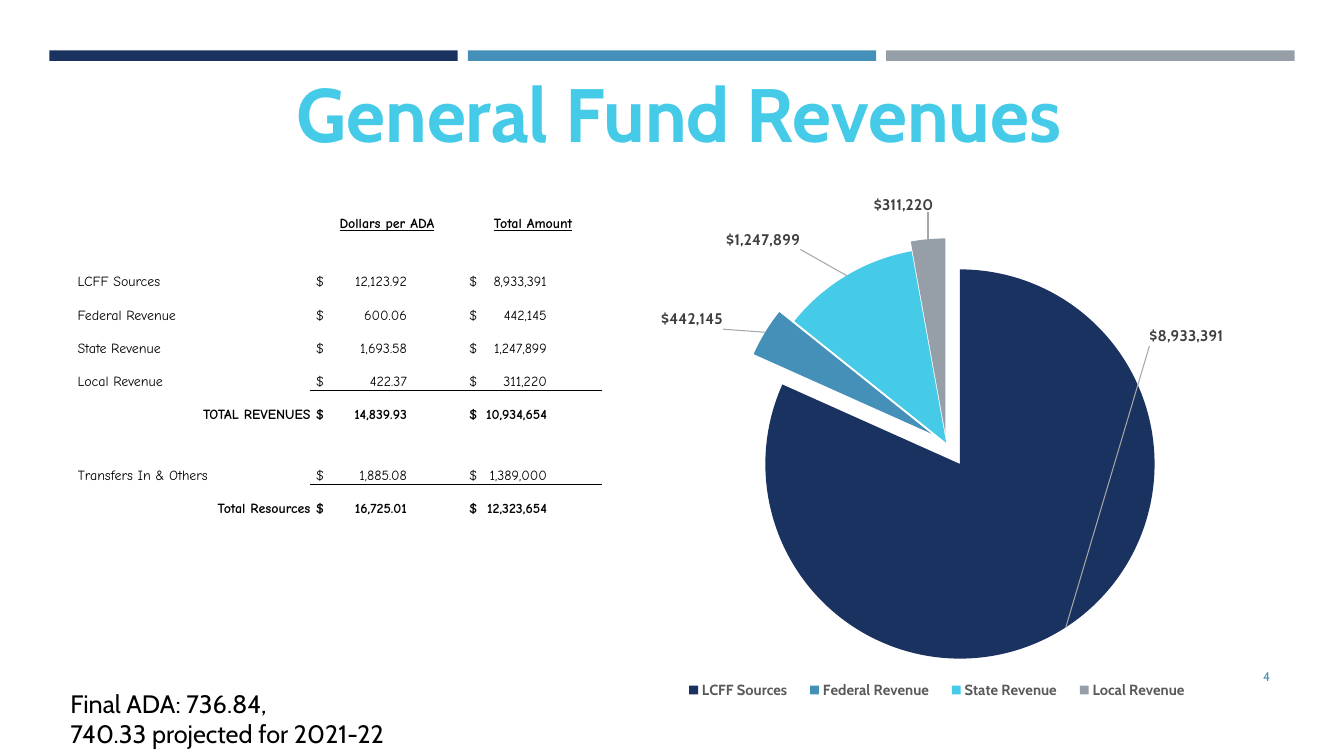
import pptx
import pptx.chart.data
import pptx.dml.color
import pptx.enum.chart
import pptx.enum.shapes
import pptx.enum.text
import pptx.oxml
import pptx.oxml.ns
import pptx.util

Pt = pptx.util.Pt
Align = pptx.enum.text.PP_ALIGN
Anchor = pptx.enum.text.MSO_ANCHOR

COLORS = {
    "navy": "1A3260", "blue": "4590B8", "cyan": "45CBE8", "gray": "969FA7",
    "black": "000000", "label": "404040", "legend": "595959", "leader": "A6A6A6",
}
BODY_FONT, TABLE_FONT = "Cabin", "Comic Neue"

# Revenue source, dollars per ADA, total amount; None marks a spacer row
REVENUE_ROWS = [
    ("LCFF Sources", "12,123.92", "8,933,391"),
    ("Federal Revenue", "600.06", "442,145"),
    ("State Revenue", "1,693.58", "1,247,899"),
    ("Local Revenue", "422.37", "311,220"),
    ("TOTAL REVENUES", "14,839.93", "10,934,654"),
    None,
    ("Transfers In & Others", "1,885.08", "1,389,000"),
    ("Total Resources", "16,725.01", "12,323,654"),
]
TOTALS = ("TOTAL REVENUES", "Total Resources")
COLUMN_WIDTHS = [166.3, 109.4, 99.4] + [65.6] * 7
ROW_HEIGHTS = [19.4, 46.8] + [23.8] * 5 + [19.4] + [23.8] * 2 + [19.4] * 8
AMOUNT_TABS = {1: 65, 2: 55.5}

# Source, amount, color, explosion, label shift as share of the chart
SLICES = [
    ("LCFF Sources", 8933391, "navy", 13, (0.13, -0.58)),
    ("Federal Revenue", 442145, "blue", 9, (-0.06, 0)),
    ("State Revenue", 1247899, "cyan", 0, (-0.07, -0.04)),
    ("Local Revenue", 311220, "gray", 5, (0.01, -0.04)),
]


def rgb(name):
    return pptx.dml.color.RGBColor.from_string(COLORS[name])


def style(font, size, color, bold=False, name=BODY_FONT):
    font.size, font.bold, font.name = Pt(size), bold, name
    font.color.rgb = rgb(color)


def chart_xml(body):
    return pptx.oxml.parse_xml(body.replace(
        ">", f" {pptx.oxml.ns.nsdecls('c', 'a')}>", 1))


def manual_layout(x, y, size=None, target=""):
    parts = [("x", x), ("y", y)]
    modes = ""
    if size:
        modes = '<c:xMode val="edge"/><c:yMode val="edge"/>'
        parts += zip("wh", size)
    values = "".join(f'<c:{key} val="{value}"/>' for key, value in parts)
    return chart_xml(f"<c:layout><c:manualLayout>{target}{modes}{values}"
                     "</c:manualLayout></c:layout>")


def add_bars(slide, box):
    left, top, width, height = box
    gap = 7.2
    bar_width = (width - 2 * gap) / 3
    for index, color in enumerate(("navy", "blue", "gray")):
        bar = slide.shapes.add_shape(
            pptx.enum.shapes.MSO_SHAPE.RECTANGLE,
            Pt(left + index * (bar_width + gap)), Pt(top), Pt(bar_width), Pt(height))
        bar.shadow.inherit = False
        bar.fill.solid()
        bar.fill.fore_color.rgb = rgb(color)
        bar.line.fill.background()


def add_text(slide, box, lines, size, color, bold=False, align=Align.LEFT,
             anchor=Anchor.TOP, wrap=True):
    frame = slide.shapes.add_textbox(*map(Pt, box)).text_frame
    frame.word_wrap = wrap
    frame.vertical_anchor = anchor
    frame.text = "\n".join(lines)
    for paragraph in frame.paragraphs:
        paragraph.alignment = align
        style(paragraph.font, size, color, bold)


def add_rule(cell, side):
    cell._tc.get_or_add_tcPr().insert(0, pptx.oxml.parse_xml(
        f'<a:{side} {pptx.oxml.ns.nsdecls("a")} w="6350"><a:solidFill>'
        f'<a:srgbClr val="{COLORS["black"]}"/></a:solidFill></a:{side}>'))


def add_tab(paragraph, position):
    paragraph._p.get_or_add_pPr().insert(0, pptx.oxml.parse_xml(
        f'<a:tabLst {pptx.oxml.ns.nsdecls("a")}>'
        f'<a:tab pos="{Pt(position)}" algn="r"/></a:tabLst>'))


def fill_cell(cell, text="", bold=False, align=Align.LEFT, anchor=Anchor.BOTTOM):
    cell.text = text
    cell.vertical_anchor = anchor
    paragraph = cell.text_frame.paragraphs[0]
    paragraph.alignment = align
    style(paragraph.font, 10, "black", bold, TABLE_FONT)
    return paragraph


def add_revenue_table(slide, box):
    table = slide.shapes.add_table(
        len(ROW_HEIGHTS), len(COLUMN_WIDTHS), *map(Pt, box)).table
    table.first_row = table.horz_banding = False
    for column, width in zip(table.columns, COLUMN_WIDTHS):
        column.width = Pt(width)
    for row, height in zip(table.rows, ROW_HEIGHTS):
        row.height = Pt(height)
    for cell in table.iter_cells():
        cell.fill.background()
        cell.margin_left = cell.margin_right = cell.margin_top = cell.margin_bottom = 0
        fill_cell(cell)

    # Column headings
    for column, heading in enumerate(("Dollars per ADA", "Total Amount"), 1):
        paragraph = fill_cell(table.cell(1, column), heading, True,
                              Align.CENTER, Anchor.MIDDLE)
        paragraph.font.underline = True

    # Revenue lines and totals
    for row, entry in enumerate(REVENUE_ROWS, 2):
        if not entry:
            continue
        source, *amounts = entry
        is_total = source in TOTALS
        fill_cell(table.cell(row, 0), source, is_total,
                  Align.RIGHT if is_total else Align.LEFT)
        for column, amount in enumerate(amounts, 1):
            cell = table.cell(row, column)
            cell.margin_left = Pt(4)
            add_tab(fill_cell(cell, f"$\t{amount}", is_total), AMOUNT_TABS[column])
            if is_total:
                add_rule(cell, "lnT")
                add_rule(table.cell(row - 1, column), "lnB")


def add_revenue_pie(slide, box):
    names, amounts, colors, explosions, shifts = zip(*SLICES)
    data = pptx.chart.data.CategoryChartData()
    data.categories = names
    data.add_series("Series 1", amounts)
    chart = slide.shapes.add_chart(
        pptx.enum.chart.XL_CHART_TYPE.PIE, *map(Pt, box), data).chart
    style(chart.font, 10, "black")
    chart.has_title = False
    chart.has_legend = True
    chart.legend.position = pptx.enum.chart.XL_LEGEND_POSITION.BOTTOM
    chart.legend.include_in_layout = False
    style(chart.legend.font, 10.5, "legend", True)
    plot = chart.plots[0]
    plot.vary_by_categories = True
    revenues = plot.series[0]

    # Dollar labels
    best_fit = pptx.enum.chart.XL_LABEL_POSITION.BEST_FIT
    labels = revenues.data_labels
    labels.show_value = True
    labels.number_format = '"$"#,##0'
    labels.number_format_is_linked = False
    labels.position = best_fit
    style(labels.font, 11, "label", True)

    # Slices
    for index, color in enumerate(colors):
        point = revenues.points[index]
        point.format.fill.solid()
        point.format.fill.fore_color.rgb = rgb(color)
        style(point.data_label.font, 11, "label", True)
        point.data_label.position = best_fit
    for slice_xml, explosion in zip(chart.element.xpath(".//c:dPt"), explosions):
        slice_xml.xpath("c:spPr")[0].addprevious(
            chart_xml(f'<c:explosion val="{explosion}"></c:explosion>'))
    for label_xml, shift in zip(chart.element.xpath(".//c:dLbl"), shifts):
        label_xml.xpath("c:idx")[0].addnext(manual_layout(*shift))

    # Leader lines, pie and legend placement
    chart.element.xpath(".//c:ser/c:dLbls")[0].append(chart_xml(
        '<c:leaderLines><c:spPr><a:ln w="9525"><a:solidFill>'
        f'<a:srgbClr val="{COLORS["leader"]}"/></a:solidFill></a:ln></c:spPr>'
        "</c:leaderLines>"))
    for layout in chart.element.xpath(".//c:plotArea/c:layout | .//c:legend/c:layout"):
        layout.getparent().remove(layout)
    chart.element.xpath(".//c:plotArea")[0].insert(
        0, manual_layout(0.2, 0.1, (0.63, 0.74), '<c:layoutTarget val="inner"/>'))
    chart.element.xpath(".//c:legendPos")[0].addnext(
        manual_layout(0.07, 0.91, (0.86, 0.06)))


def main():
    deck = pptx.Presentation()
    deck.slide_width, deck.slide_height = Pt(960), Pt(540)
    slide = deck.slides.add_slide(deck.slide_layouts[6])
    add_bars(slide, (35.3, 36, 889.4, 7.5))
    add_text(slide, (831.6, 468.7, 82.8, 28.8), ["4"], 9, "blue",
             align=Align.RIGHT, anchor=Anchor.MIDDLE)
    add_text(slide, (177.1, 44.6, 615.6, 72.7), ["General Fund Revenues"], 54, "cyan",
             bold=True, align=Align.CENTER, wrap=False)
    add_revenue_table(slide, (55.4, 117.4, 834.5, 403.2))
    add_revenue_pie(slide, (448.6, 139.7, 441.4, 375.8))
    add_text(slide, (43.2, 488.2, 393.1, 51.1),
             ["Final ADA: 736.84,", "740.33 projected for 2021-22"], 18, "black")
    deck.save("out.pptx")


if __name__ == "__main__":
    main()
